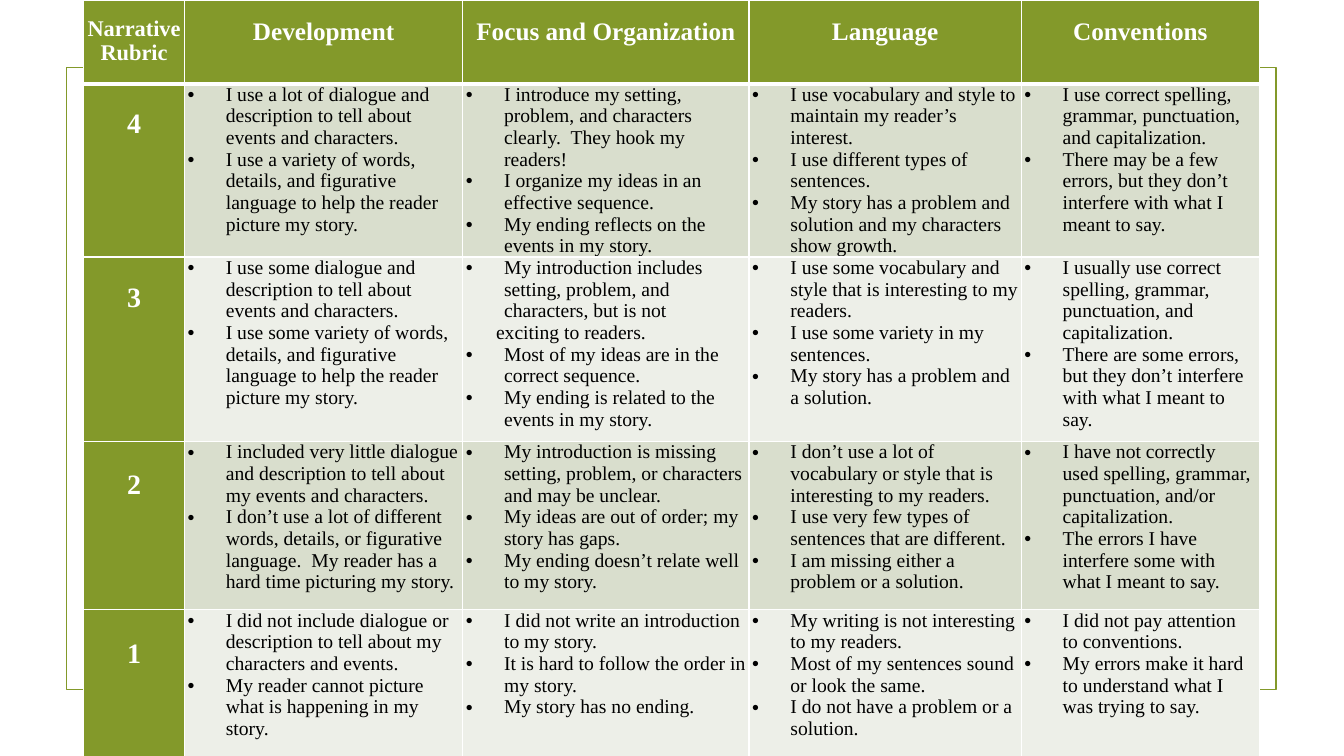
from copy import deepcopy

from lxml.etree import SubElement
from pptx import Presentation
from pptx.dml.color import RGBColor
from pptx.enum.shapes import MSO_SHAPE
from pptx.enum.text import PP_ALIGN
from pptx.oxml.ns import qn
from pptx.util import Inches, Pt

GREEN, WHITE, BLACK = "83992A", "FFFFFF", "000000"
BANDS = ["D9DECD", "EDEFE8"]
COLUMN_WIDTHS = [1, 2.76, 2.84, 2.7, 2.36]
ROW_HEIGHTS = [0.83, 1.67, 1.83, 1.67, 1.5]
HEADINGS = ["Narrative\vRubric", "Development", "Focus and Organization",
            "Language", "Conventions"]
BODY = {"size": Pt(14), "bold": False}
PLAIN = ">"  # starts a paragraph that has no bullet

# Score, space above it, then one list of statements per column
LEVELS = [
    ("4", 0.25, [
        ["I use a lot of dialogue and description to tell about events and characters.",
         "I use a variety of words, details, and figurative language to help the "
         "reader picture my story."],
        ["I introduce my setting, problem, and characters clearly.  They hook my readers!",
         "I organize my ideas in an effective sequence.",
         "My ending reflects on the events in my story."],
        ["I use vocabulary and style to maintain my reader’s interest.",
         "I use different types of sentences.",
         "My story has a problem and solution and my characters show growth."],
        ["I use correct spelling, grammar, punctuation, and capitalization.",
         "There may be a few errors, but they don’t interfere with what I meant to say."],
    ]),
    ("3", 0.25, [
        ["I use some dialogue and description to tell about events and characters.",
         "I use some variety of words, details, and figurative language to help the "
         "reader picture my story."],
        ["My introduction includes setting, problem, and characters, but is not",
         PLAIN + "exciting to readers.",
         "Most of my ideas are in the correct sequence.",
         "My ending is related to the events in my story."],
        ["I use some vocabulary and style that is interesting to my readers.",
         "I use some variety in my sentences.",
         "My story has a problem and a solution."],
        ["I usually use correct spelling, grammar, punctuation, and capitalization.",
         "There are some errors, but they don’t interfere with what I meant to say."],
    ]),
    ("2", 0.28, [
        ["I included very little dialogue and description to tell about my events "
         "and characters.",
         "I don’t use a lot of different words, details, or figurative language.  "
         "My reader has a hard time picturing my story."],
        ["My introduction is missing setting, problem, or characters and may be unclear.",
         "My ideas are out of order; my story has gaps.",
         "My ending doesn’t relate well to my story."],
        ["I don’t use a lot of vocabulary or style that is interesting to my readers.",
         "I use very few types of sentences that are different.",
         "I am missing either a problem or a solution."],
        ["I have not correctly\vused spelling, grammar, punctuation, and/or capitalization.",
         "The errors I have interfere some with what I meant to say."],
    ]),
    ("1", 0.28, [
        ["I did not include dialogue or description to tell about my characters and events.",
         "My reader cannot picture what is happening in my story."],
        ["I did not write an introduction to my story.",
         "It is hard to follow the order in my story.",
         "My story has no ending."],
        ["My writing is not interesting to my readers.",
         "Most of my sentences sound or look the same.",
         "I do not have a problem or a solution."],
        ["I did not pay attention to conventions.",
         "My errors make it hard to understand what I was trying to say."],
    ]),
]


def color(value):
    return RGBColor.from_string(value)


def write(para, text, font_values, font_color):
    para.text = text
    for span in para.runs:
        span.font.name = "Times New Roman"
        span.font.color.rgb = color(font_color)
        for name, value in font_values.items():
            setattr(span.font, name, value)
    # Line breaks take the format of the text around them
    for line_break in para._p.findall(qn("a:br")):
        line_break.append(deepcopy(para.runs[0]._r.rPr))


def indent(para, left, bullet):
    properties = para._p.get_or_add_pPr()
    properties.set("marL", str(Inches(left)))
    properties.set("indent", str(-Inches(left) if bullet else 0))
    if bullet:
        SubElement(properties, qn("a:buFont"), typeface="Arial")
        SubElement(properties, qn("a:buChar"), char="•")
    else:
        SubElement(properties, qn("a:buNone"))


def format_cell(cell, fill, top=0, widths=(1, 1, 1, 1)):
    margins = {"margin_left": 0.03, "margin_right": 0.03,
               "margin_top": top, "margin_bottom": 0}
    for name, value in margins.items():
        setattr(cell, name, Inches(value))
    properties = cell._tc.get_or_add_tcPr()
    for side, width in zip("LRTB", widths):
        line = SubElement(properties, qn(f"a:ln{side}"), w=str(Pt(width)))
        solid = SubElement(line, qn("a:solidFill"))
        SubElement(solid, qn("a:srgbClr"), val=WHITE)
    cell.fill.solid()
    cell.fill.fore_color.rgb = color(fill)


def fill_label(cell, text, size, top, widths=(1, 1, 1, 1)):
    format_cell(cell, GREEN, top, widths)
    para = cell.text_frame.paragraphs[0]
    para.alignment = PP_ALIGN.CENTER
    write(para, text, {"size": Pt(size), "bold": True}, WHITE)


def fill_statements(cell, statements, fill, widths):
    format_cell(cell, fill, widths=widths)
    frame = cell.text_frame
    for index, statement in enumerate(statements):
        para = frame.add_paragraph() if index else frame.paragraphs[0]
        bullet = not statement.startswith(PLAIN)
        indent(para, 0.38 if bullet else 0.3, bullet)
        write(para, statement.removeprefix(PLAIN), BODY, BLACK)


def add_frame(page):
    frame = page.shapes.add_shape(MSO_SHAPE.RECTANGLE, Inches(0.66), Inches(0.67),
                                  Inches(12), Inches(6.17))
    frame.shadow.inherit = False
    frame.fill.background()
    frame.line.color.rgb = color(GREEN)
    frame.line.width = Pt(1.25)


def add_rubric(page):
    table = page.shapes.add_table(
        len(ROW_HEIGHTS), len(COLUMN_WIDTHS), Inches(0.83), Inches(0),
        Inches(sum(COLUMN_WIDTHS)), Inches(sum(ROW_HEIGHTS))).table
    for column, width in zip(table.columns, COLUMN_WIDTHS):
        column.width = Inches(width)
    for row, height in zip(table.rows, ROW_HEIGHTS):
        row.height = Inches(height)

    # Heading row
    for index, heading in enumerate(HEADINGS):
        size, top = (18, 0.18) if index else (16, 0.16)
        fill_label(table.cell(0, index), heading, size, top, (1, 1, 1, 3))

    # One row for each score
    for row, (score, top, columns) in enumerate(LEVELS, start=1):
        widths = (1, 1, 3 if row == 1 else 1, 1)
        fill_label(table.cell(row, 0), score, 20, top, widths)
        for index, statements in enumerate(columns, start=1):
            fill_statements(table.cell(row, index), statements,
                            BANDS[(row - 1) % 2], widths)


def main():
    deck = Presentation()
    deck.slide_width, deck.slide_height = Inches(13.33), Inches(7.5)
    page = deck.slides.add_slide(deck.slide_layouts[6])
    add_frame(page)
    add_rubric(page)
    deck.save("out.pptx")


if __name__ == "__main__":
    main()
